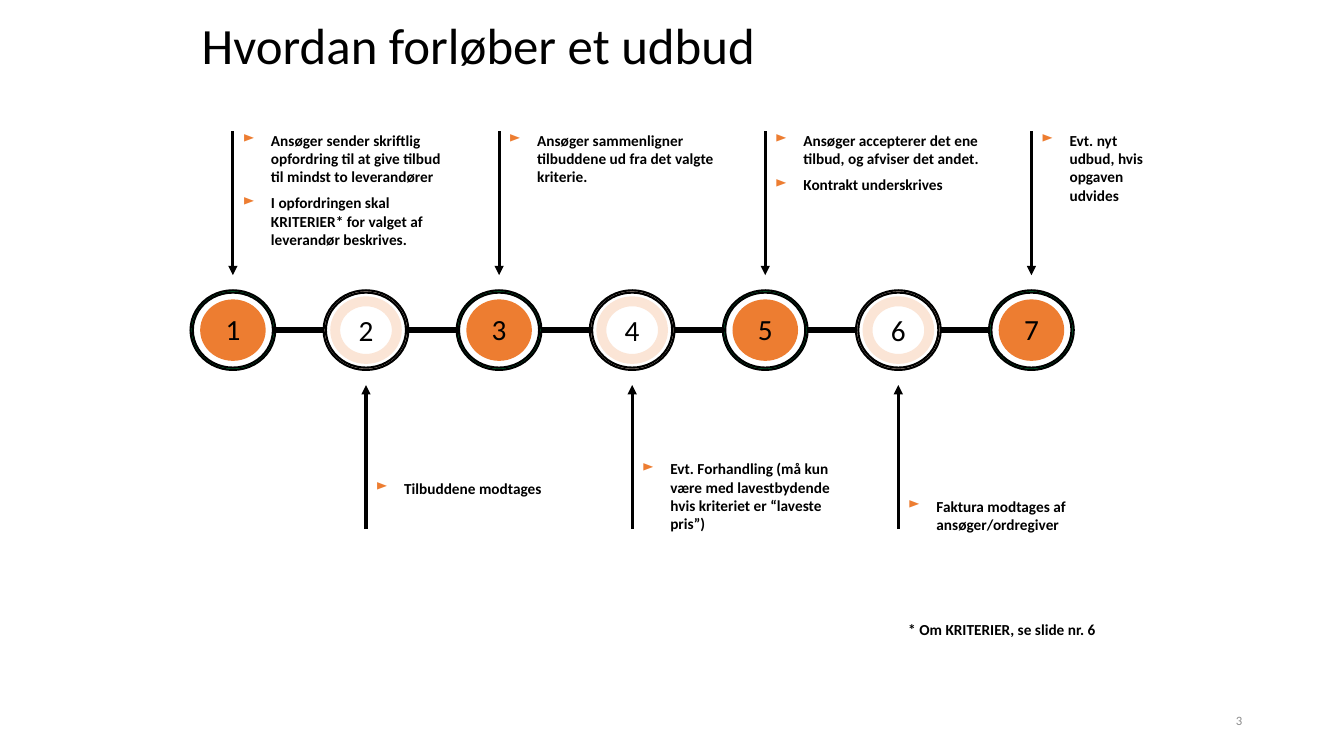
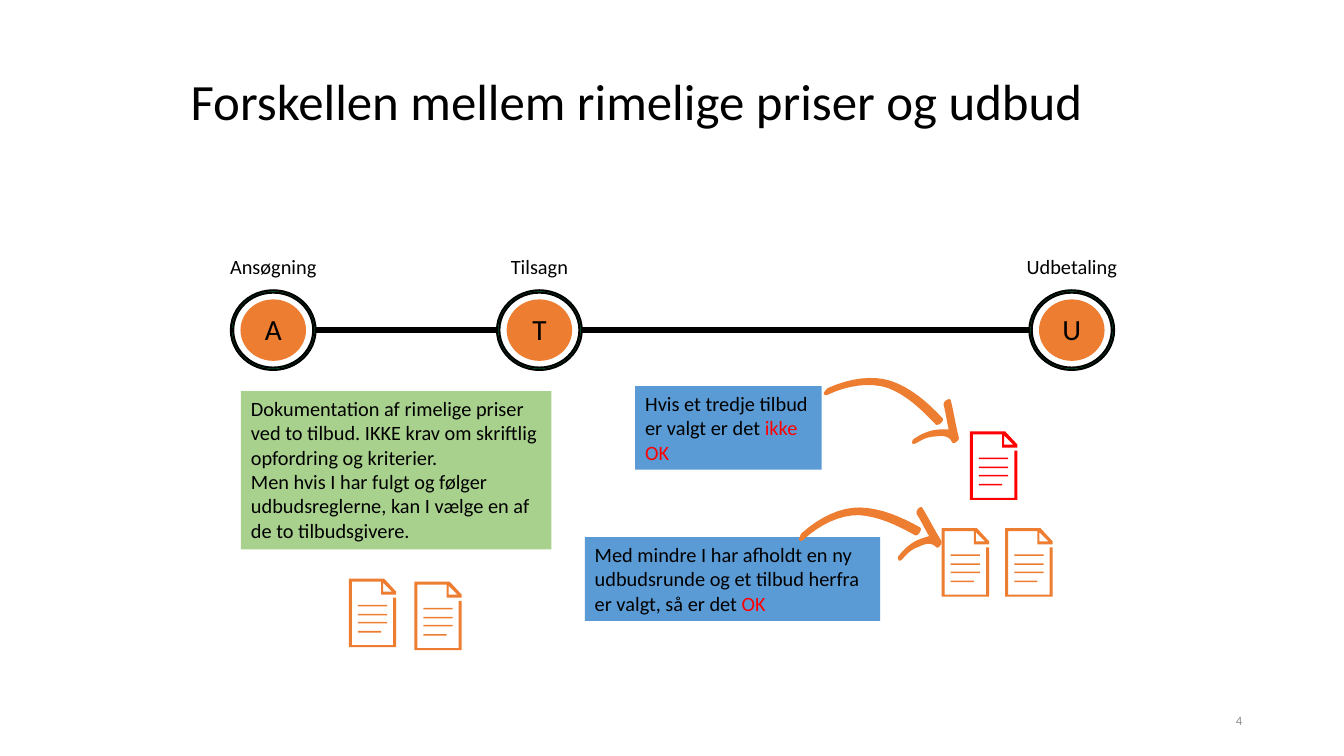
import math
from dataclasses import dataclass

from lxml import etree
from pptx import Presentation
from pptx.dml.color import RGBColor
from pptx.enum import shapes, text
from pptx.oxml import ns
from pptx.util import Inches, Pt

# Shared look
BLACK = RGBColor(0x00, 0x00, 0x00)
GREY = RGBColor(0x8C, 0x8C, 0x8C)
ORANGE = RGBColor(0xED, 0x7D, 0x31)
PEACH = RGBColor(0xFB, 0xE5, 0xD6)
GREEN = RGBColor(0x00, 0xB0, 0x50)
LIGHT_GREEN = RGBColor(0xA9, 0xD1, 0x8E)
BLUE = RGBColor(0x5B, 0x9B, 0xD5)
RED = RGBColor(0xFF, 0x00, 0x00)
FONT = "Calibri"
KIND = shapes.MSO_SHAPE
LEFT, CENTER, RIGHT = text.PP_ALIGN.LEFT, text.PP_ALIGN.CENTER, text.PP_ALIGN.RIGHT
TOP, MIDDLE = text.MSO_ANCHOR.TOP, text.MSO_ANCHOR.MIDDLE
DEFAULT_INSETS = (0.1, 0.05, 0.1, 0.05)
NOTE_INSETS = (0.1, 0, 0.08, 0.05)

# Timeline geometry, in inches
PITCH = 1.32
AXIS = 3.275
RING_WIDTH, RING_HEIGHT = 0.84, 0.79


@dataclass(frozen=True)
class Style:
    size: float
    bold: bool = False
    color: RGBColor = BLACK
    align: int = LEFT
    anchor: int = TOP
    insets: tuple = DEFAULT_INSETS
    wrap: bool = True
    line_spacing: float = 1.0
    space_before: float = 0
    space_after: float = 0
    bullet: bool = False


@dataclass(frozen=True)
class Step:
    label: str
    place: int
    filled: bool = True


@dataclass(frozen=True)
class Note:
    place: int
    top: float
    width: float
    height: float
    lines: tuple


@dataclass(frozen=True)
class Callout:
    at: tuple
    fill: RGBColor
    lines: tuple


TITLE = Style(36.3, insets=(0, 0.05, 0.1, 0.05), line_spacing=0.9)
NUMBER = Style(9.1, color=GREY, align=RIGHT, anchor=MIDDLE)
NOTE = Style(10.9, bold=True, insets=NOTE_INSETS, space_before=5.45, bullet=True)
FOOTNOTE = Style(10.9, bold=True, insets=NOTE_INSETS)
DISC = Style(20.9, align=CENTER, anchor=MIDDLE, insets=(0,) * 4, wrap=False,
             line_spacing=0.95, space_after=8.3)
RING = Style(20.9, align=CENTER, anchor=MIDDLE, insets=(0,) * 4, wrap=False)
BODY = Style(14.5)
LABEL = Style(14.5, align=CENTER)


def inches(values) -> list:
    return [Inches(value) for value in values]


# Text
def add_bullet(para) -> None:
    props = para._p.get_or_add_pPr()
    props.set("marL", str(Inches(0.28)))
    props.set("indent", str(-Inches(0.28)))
    color = etree.SubElement(props, ns.qn("a:buClr"))
    etree.SubElement(color, ns.qn("a:srgbClr")).set("val", str(ORANGE))
    etree.SubElement(props, ns.qn("a:buChar")).set("char", "►")


def write(shape, lines: tuple, style: Style) -> None:
    """Each line is a string or a tuple of (words, color) spans."""
    frame = shape.text_frame
    sides = ("margin_left", "margin_top", "margin_right", "margin_bottom")
    frame_format = dict(zip(sides, inches(style.insets)))
    frame_format |= {"word_wrap": style.wrap, "vertical_anchor": style.anchor}
    for name, value in frame_format.items():
        setattr(frame, name, value)
    for index, line in enumerate(lines):
        para = frame.add_paragraph() if index else frame.paragraphs[0]
        para_format = {
            "alignment": style.align,
            "line_spacing": style.line_spacing,
            "space_before": Pt(style.space_before if index else 0),
            "space_after": Pt(style.space_after),
        }
        for name, value in para_format.items():
            setattr(para, name, value)
        if style.bullet:
            add_bullet(para)
        spans = ((line, style.color),) if isinstance(line, str) else line
        for words, color in spans:
            span = para.add_run()
            span.text = words
            span.font.color.rgb = color
            for name, value in {"name": FONT, "size": Pt(style.size), "bold": style.bold}.items():
                setattr(span.font, name, value)


def add_text(page, at: tuple, lines: tuple, style: Style) -> None:
    write(page.shapes.add_textbox(*inches(at)), lines, style)


# Shapes
def paint(shape, fill: RGBColor, line_width: float = 0) -> None:
    shape.shadow.inherit = False
    shape.fill.solid()
    shape.fill.fore_color.rgb = fill
    if line_width:
        shape.line.color.rgb = BLACK
        shape.line.width = Pt(line_width)
    else:
        shape.line.fill.background()


def add_shape(holder, kind, at: tuple, fill: RGBColor, line_width: float = 0):
    shape = holder.shapes.add_shape(kind, *inches(at))
    paint(shape, fill, line_width)
    return shape


def centered(x: float, width: float, height: float) -> tuple:
    return x - width / 2, AXIS - height / 2, width, height


def add_step(page, x: float, step: Step) -> None:
    group = page.shapes.add_group_shape()
    ring = add_shape(group, KIND.DONUT, centered(x, RING_WIDTH, RING_HEIGHT),
                     GREEN if step.filled else PEACH, 1.5)
    ring.adjustments[0] = 0.029
    if step.filled:
        disc = add_shape(group, KIND.OVAL, centered(x, 0.65, 0.61), ORANGE)
        write(disc, (step.label,), DISC)
    else:
        write(ring, (step.label,), RING)
        inner = add_shape(group, KIND.DONUT, centered(x, 0.71, 0.67), PEACH)
        inner.adjustments[0] = 0.147


def add_timeline(page, first_x: float, steps: tuple) -> None:
    centers = [first_x + PITCH * step.place for step in steps]
    for start, end in zip(centers, centers[1:]):
        bar = centered((start + end) / 2, end - start - RING_WIDTH, 0.05)
        add_shape(page, KIND.RECTANGLE, bar, BLACK, 1)
    for x, step in zip(centers, steps):
        add_step(page, x, step)


def add_pointer(page, x: float, start: float, end: float) -> None:
    line = page.shapes.add_connector(shapes.MSO_CONNECTOR.STRAIGHT, *inches((x, start, x, end)))
    line.line.color.rgb = BLACK
    line.line.width = Pt(2.25)
    outline = line.line._get_or_add_ln()
    etree.SubElement(outline, ns.qn("a:tailEnd")).set("type", "triangle")
    etree.SubElement(line._element.spPr, ns.qn("a:effectLst"))


def add_outline(page, contours: list, fill: RGBColor) -> None:
    rings = [[tuple(inches(point)) for point in contour] for contour in contours]
    builder = page.shapes.build_freeform(*rings[0][0])
    for index, ring in enumerate(rings):
        if index:
            builder.move_to(*ring[0])
        builder.add_line_segments(ring[1:], close=True)
    paint(builder.convert_to_shape(), fill)


# Document icon: frame, folded corner and four text lines
ICON_FRAME = ((0.03, 0.03), (0.03, 0.66), (0.44, 0.66), (0.44, 0.19), (0.47, 0.19),
              (0.47, 0.68), (0, 0.68), (0, 0), (0.35, 0), (0.47, 0.13), (0.47, 0.16),
              (0.32, 0.16), (0.32, 0.03))
ICON_FOLD = ((0.43, 0.13), (0.34, 0.04), (0.34, 0.13))
ICON_LINES = ((0.26, 0.38), (0.35, 0.38), (0.43, 0.38), (0.52, 0.32))


def add_document(page, left: float, top: float, color: RGBColor) -> None:
    rows = [((0.09, y), (end, y), (end, y + 0.015), (0.09, y + 0.015)) for y, end in ICON_LINES]
    contours = [[(left + x, top + y) for x, y in contour]
                for contour in (ICON_FRAME, ICON_FOLD, *rows)]
    add_outline(page, contours, color)


# Hand-drawn arrow: a start point, then three points per Bézier curve
ARROW_SHAFT = (
    (0.36, 0.21), (0.22, 0.06), (0.07, -0.08), (-0.11, -0.15), (-0.29, -0.21), (-0.51, -0.18),
    (-0.72, -0.08), (-0.73, -0.08), (-0.75, -0.08), (-0.75, -0.1), (-0.74, -0.12),
    (-0.72, -0.14), (-0.71, -0.15), (-0.49, -0.25), (-0.26, -0.28), (-0.08, -0.22),
    (0.12, -0.15), (0.28, -0.01), (0.43, 0.15), (0.45, 0.18), (0.38, 0.23), (0.36, 0.21))
ARROW_HEAD = (
    (0.59, 0.34), (0.56, 0.22), (0.54, 0.09), (0.51, -0.03), (0.5, -0.06), (0.43, -0.02),
    (0.44, 0.02), (0.46, 0.09), (0.47, 0.18), (0.49, 0.26), (0.46, 0.26), (0.44, 0.26),
    (0.41, 0.26), (0.33, 0.26), (0.24, 0.29), (0.15, 0.35), (0.14, 0.35), (0.12, 0.38),
    (0.13, 0.4), (0.14, 0.41), (0.16, 0.4), (0.18, 0.39), (0.24, 0.35), (0.3, 0.33),
    (0.36, 0.33), (0.42, 0.32), (0.49, 0.32), (0.52, 0.38), (0.53, 0.42), (0.6, 0.37),
    (0.59, 0.34))


def flatten(points: tuple, steps: int = 8) -> list:
    result = [points[0]]
    for first in range(0, len(points) - 1, 3):
        curve = points[first:first + 4]
        for step in range(1, steps + 1):
            t = step / steps
            weights = [math.comb(3, k) * t**k * (1 - t)**(3 - k) for k in range(4)]
            result.append(tuple(sum(w * p[axis] for w, p in zip(weights, curve))
                                for axis in (0, 1)))
    return result


def add_curved_arrow(page, x: float, y: float, degrees: float) -> None:
    cos, sin = math.cos(math.radians(degrees)), math.sin(math.radians(degrees))
    contours = [[(x + dx * cos - dy * sin, y + dx * sin + dy * cos) for dx, dy in flatten(part)]
                for part in (ARROW_SHAFT, ARROW_HEAD)]
    add_outline(page, contours, ORANGE)


# Pages
def add_page(deck, title: str, left: float, top: float, number: str):
    page = deck.slides.add_slide(deck.slide_layouts[6])
    add_text(page, (left, top, 9.4, 0.7), (title,), TITLE)
    add_text(page, (9.42, 6.95, 3, 0.4), (number,), NUMBER)
    return page


NOTES = (
    Note(0, 1.3, 2.24, 1.24, (
        "Ansøger sender skriftlig opfordring til at give tilbud til mindst to leverandører",
        "I opfordringen skal KRITERIER* for valget af leverandør beskrives.")),
    Note(1, 4.75, 2.24, 0.24, ("Tilbuddene modtages",)),
    Note(2, 1.3, 2.24, 0.6, ("Ansøger sammenligner tilbuddene ud fra det valgte kriterie.",)),
    Note(3, 4.56, 2.24, 0.78, (
        "Evt. Forhandling (må kun være med lavestbydende hvis kriteriet er “laveste pris”)",)),
    Note(4, 1.3, 2.24, 0.69, (
        "Ansøger accepterer det ene tilbud, og afviser det andet.", "Kontrakt underskrives")),
    Note(5, 4.93, 2.24, 0.42, ("Faktura modtages af ansøger/ordregiver",)),
    Note(6, 1.3, 1.22, 0.78, ("Evt. nyt udbud, hvis opgaven udvides",)),
)
CALLOUTS = (
    Callout((2.39, 3.88, 3.08, 1.57), LIGHT_GREEN, (
        "Dokumentation af rimelige priser ved to tilbud. IKKE krav om skriftlig opfordring "
        "og kriterier.",
        "Men hvis I har fulgt og følger udbudsreglerne, kan I vælge en af de to tilbudsgivere.")),
    Callout((6.3, 3.83, 1.85, 0.83), BLUE, (
        (("Hvis et tredje tilbud er valgt er det ", BLACK), ("ikke OK", RED)),)),
    Callout((5.8, 5.33, 2.93, 0.83), BLUE, (
        (("Med mindre I har afholdt en ny udbudsrunde og et tilbud herfra er valgt, så er det ",
          BLACK), ("OK", RED)),)),
)
DOCUMENTS = ((3.46, 5.74, ORANGE), (4.11, 5.77, ORANGE), (9.62, 4.28, RED),
             (9.34, 5.24, ORANGE), (9.97, 5.24, ORANGE))
STAGES = (("Ansøgning", 0), ("Tilsagn", 2), ("Udbetaling", 6))


def build_tender_page(deck) -> None:
    page = add_page(deck, "Hvordan forløber et udbud", 2, 0.16, "3")
    first_x = 2.31
    add_timeline(page, first_x, tuple(Step(str(i + 1), i, i % 2 == 0) for i in range(7)))
    for note in NOTES:
        x = first_x + PITCH * note.place
        add_pointer(page, x, *((5.25, 3.82) if note.place % 2 else (1.3, 2.73)))
        add_text(page, (x, note.top, note.width, note.height), note.lines, NOTE)
    add_text(page, (8.91, 6.15, 2.24, 0.24), ("* Om KRITERIER, se slide nr. 6",), FOOTNOTE)


def build_comparison_page(deck) -> None:
    page = add_page(deck, "Forskellen mellem rimelige priser og udbud", 1.89, 0.71, "4")
    first_x = 2.71
    add_timeline(page, first_x, tuple(Step(name[0], place) for name, place in STAGES))
    for name, place in STAGES:
        add_text(page, (first_x + PITCH * place - 0.77, 2.47, 1.54, 0.35), (name,), LABEL)
    for document in DOCUMENTS:
        add_document(page, *document)
    for callout in CALLOUTS:
        write(add_shape(page, KIND.RECTANGLE, callout.at, callout.fill), callout.lines, BODY)
    add_curved_arrow(page, 8.92, 4, 0)
    add_curved_arrow(page, 8.67, 5.22, -17.7)


def main() -> None:
    deck = Presentation()
    deck.slide_width, deck.slide_height = Inches(13.33), Inches(7.5)
    build_tender_page(deck)
    build_comparison_page(deck)
    deck.save("out.pptx")


if __name__ == "__main__":
    main()
